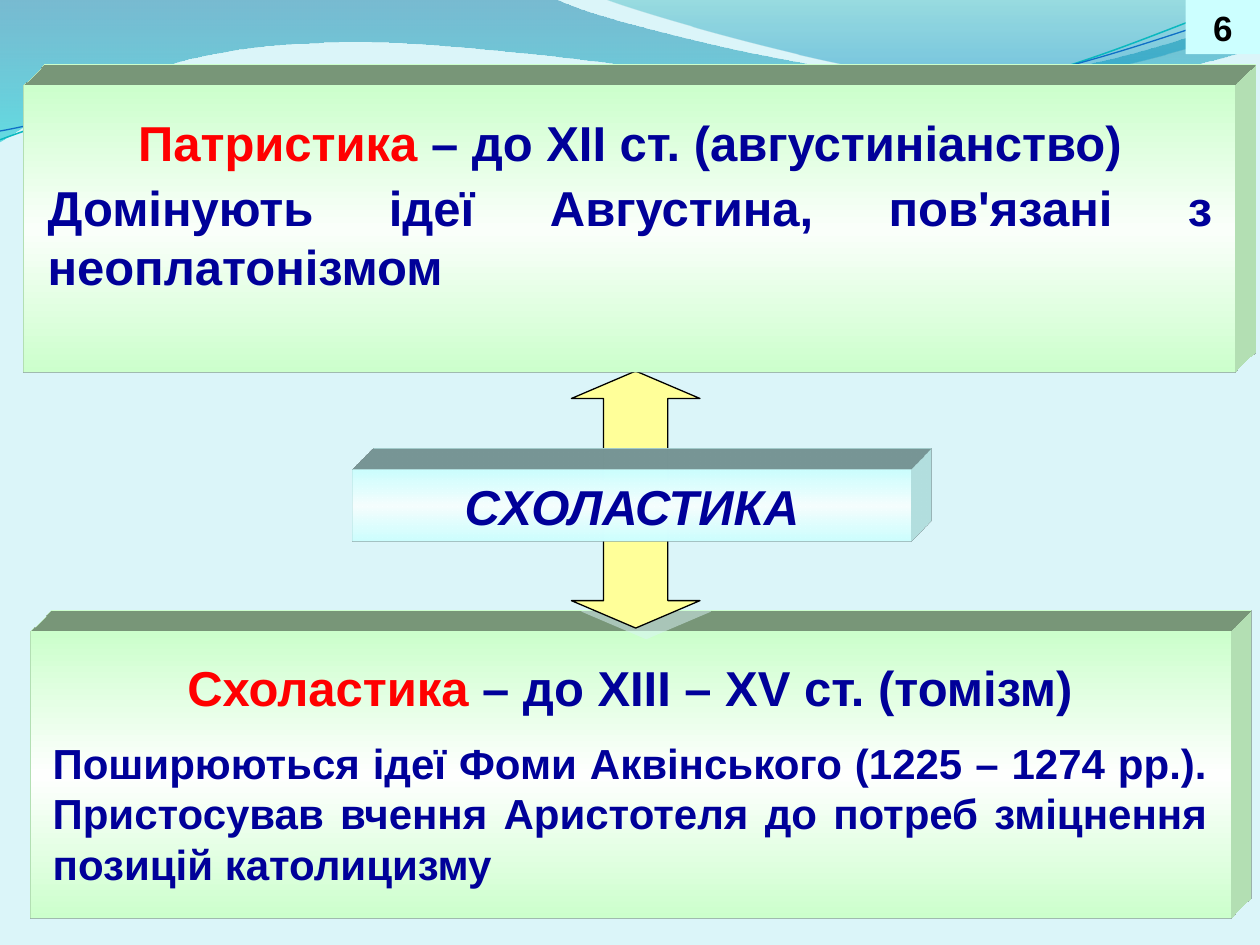
from lxml.etree import SubElement
from pptx import Presentation
from pptx.dml.color import RGBColor
from pptx.enum.shapes import MSO_SHAPE
from pptx.enum.text import MSO_ANCHOR, MSO_AUTO_SIZE, PP_ALIGN
from pptx.oxml.ns import qn
from pptx.util import Inches, Pt

NAVY, RED, BLACK = "000099", "FF0000", "000000"
GREEN, CYAN, YELLOW, PALE = "CCFFCC", "CCFFFF", "FFFF99", "DBF5F9"

LOWER_WAVE = [
    [(0, 0)],
    [(4.4, -0.01)],
    [(4.76, 0.17), (6.64, 0.63), (7.58, 0.63)],
    [(8.53, 0.63), (9.58, 0.26), (10, 0.09)],
    [(10.01, 0.36)],
    [(9.83, 0.44), (8.7, 0.76), (7.46, 0.75)],
    [(6.22, 0.75), (3.82, 0.28), (2.57, 0.34)],
    [(1.29, 0.36), (0.46, 0.83), (-0.01, 1.13)],
]
UPPER_WAVE = [
    [(4.79, -0.01)],
    [(5.09, 0.11), (6.82, 0.62), (7.69, 0.65)],
    [(8.56, 0.69), (9.61, 0.32), (10, 0.21)],
    [(10, 0)],
]
TEAL_LINE = [
    [(0, 1.11)],
    [(0.48, 0.93), (1.58, 0.57), (2.77, 0.52)],
    [(3.95, 0.47), (5.93, 0.89), (7.13, 0.8)],
    [(8.33, 0.71), (9.38, 0.15), (9.98, -0.02)],
]
BLUE_LINE = [
    [(0, 1.04)],
    [(0.47, 0.96), (1.64, 0.61), (2.83, 0.56)],
    [(4.03, 0.51), (5.97, 0.84), (7.17, 0.75)],
    [(8.36, 0.67), (9.41, 0.21), (10, 0.06)],
]


def rgb(color):
    return RGBColor.from_string(color)


def add_color(parent, color, opacity=100):
    clr = SubElement(parent, qn("a:srgbClr"), val=color)
    if opacity < 100:
        SubElement(clr, qn("a:alpha"), val=str(opacity * 1000))


def set_gradient(sp, stops):
    sp.fill.gradient()
    sp.fill.gradient_angle = 270
    gs_list = sp._element.spPr.find(".//" + qn("a:gsLst"))
    for gs in list(gs_list):
        gs_list.remove(gs)
    for pos, color, opacity in stops:
        add_color(SubElement(gs_list, qn("a:gs"), pos=str(pos * 1000)), color, opacity)


def style(sp, fill=None, line=None, width=0.75):
    sp.shadow.inherit = False
    if fill:
        sp.fill.solid()
        sp.fill.fore_color.rgb = rgb(fill)
    else:
        sp.fill.background()
    if line:
        sp.line.color.rgb = rgb(line)
        sp.line.width = Pt(width)
    else:
        sp.line.fill.background()
    return sp


def add_curve(s, segments, closed=False, **look):
    points = [(Inches(x), Inches(y)) for seg in segments for x, y in seg]
    builder = s.shapes.build_freeform(*points[0])
    builder.add_line_segments(points[1:], close=closed)
    sp = builder.convert_to_shape()
    steps = iter(sp._element.spPr.findall(".//" + qn("a:lnTo")))
    for seg in segments[1:]:
        first, *others = [next(steps) for _ in seg]
        if others:
            first.tag = qn("a:cubicBezTo")
            for step in others:
                first.append(step[0])
                step.getparent().remove(step)
    return style(sp, **look)


def add_shape(s, kind, x, y, w, h, **look):
    return style(s.shapes.add_shape(kind, Inches(x), Inches(y), Inches(w), Inches(h)), **look)


def add_slab(s, x, y, w, h, color, middle):
    sp = add_shape(s, MSO_SHAPE.RECTANGLE, x, y, w, h)
    set_gradient(sp, [(0, color, 100), (50, middle, 100), (100, color, 100)])
    spPr = sp._element.spPr
    scene = SubElement(spPr, qn("a:scene3d"))
    SubElement(scene, qn("a:camera"), prst="legacyObliqueTopRight")
    SubElement(scene, qn("a:lightRig"), rig="legacyFlat3", dir="b")
    solid = SubElement(spPr, qn("a:sp3d"), extrusionH="430200", prstMaterial="legacyMatte")
    add_color(SubElement(solid, qn("a:extrusionClr")), color)
    return sp


def add_arrow(s, y, rotation):
    sp = add_shape(s, MSO_SHAPE.RIGHT_ARROW, 4.61, y, 0.87, 1.02, fill=YELLOW, line=BLACK)
    sp.rotation = rotation
    sp.adjustments[0], sp.adjustments[1] = 0.5, 0.25
    effects = sp._element.spPr.find(qn("a:effectLst"))
    shadow = SubElement(effects, qn("a:outerShdw"), dist=str(Pt(8.5)), dir="2700000", algn="ctr", rotWithShape="0")
    add_color(shadow, PALE, 50)


def add_text(p, text, size=28, color=NAVY, italic=False, align=PP_ALIGN.CENTER, before=0):
    p.alignment = align
    p.space_before = Pt(before)
    r = p.add_run()
    r.text = text
    r.font.name = "Arial"
    r.font.size = Pt(size)
    r.font.bold = True
    r.font.italic = italic
    r.font.color.rgb = rgb(color)


def add_period(s, x, y, w, h, term, rest, body, size, before):
    tf = s.shapes.add_textbox(Inches(x), Inches(y), Inches(w), Inches(h)).text_frame
    tf.word_wrap = True
    tf.auto_size = MSO_AUTO_SIZE.SHAPE_TO_FIT_TEXT
    add_text(tf.paragraphs[0], term, color=RED)
    add_text(tf.paragraphs[0], rest)
    add_text(tf.add_paragraph(), body, size=size, align=PP_ALIGN.JUSTIFY, before=before)


def main():
    prs = Presentation()
    prs.slide_width, prs.slide_height = Inches(10), Inches(7.5)
    s = prs.slides.add_slide(prs.slide_layouts[6])
    s.background.fill.solid()
    s.background.fill.fore_color.rgb = rgb(PALE)

    set_gradient(add_curve(s, LOWER_WAVE, closed=True), [(0, "0074A1", 45), (100, "00C6CF", 55)])
    set_gradient(add_curve(s, UPPER_WAVE, closed=True), [(0, "00A1A9", 30), (80, "008BBF", 45)])
    add_curve(s, TEAL_LINE, line="0AB8BF", width=0.85)
    add_curve(s, BLUE_LINE, line="0F6FC6")

    add_arrow(s, 2.87, 270)
    add_slab(s, 0.19, 0.68, 9.61, 2.28, GREEN, "FAFFFA")
    add_period(s, 0.28, 0.84, 9.44, 1.57, "Патристика ", "– до XII ст. (августиніанство)",
               "Домінують ідеї Августина, пов'язані з неоплатонізмом", 28, 4)
    add_slab(s, 0.24, 5.01, 9.53, 2.28, GREEN, "FEFFFE")
    add_period(s, 0.32, 5.17, 9.36, 1.99, "Схоластика", " – до XIII – XV ст. (томізм)",
               "Поширюються ідеї Фоми Аквінського (1225 – 1274 рр.). "
               "Пристосував вчення Аристотеля до потреб зміцнення позицій католицизму", 24, 12)
    add_arrow(s, 4.04, 90)

    tf = add_slab(s, 2.8, 3.73, 4.43, 0.57, CYAN, "F6FFFF").text_frame
    tf.word_wrap = False
    tf.vertical_anchor = MSO_ANCHOR.MIDDLE
    add_text(tf.paragraphs[0], "СХОЛАСТИКА", italic=True)

    tf = add_shape(s, MSO_SHAPE.RECTANGLE, 9.41, 0, 0.59, 0.43, fill=CYAN).text_frame
    tf.word_wrap = True
    tf.vertical_anchor = MSO_ANCHOR.TOP
    add_text(tf.paragraphs[0], "6", size=20, color=BLACK)
    prs.save("out.pptx")


if __name__ == "__main__":
    main()
